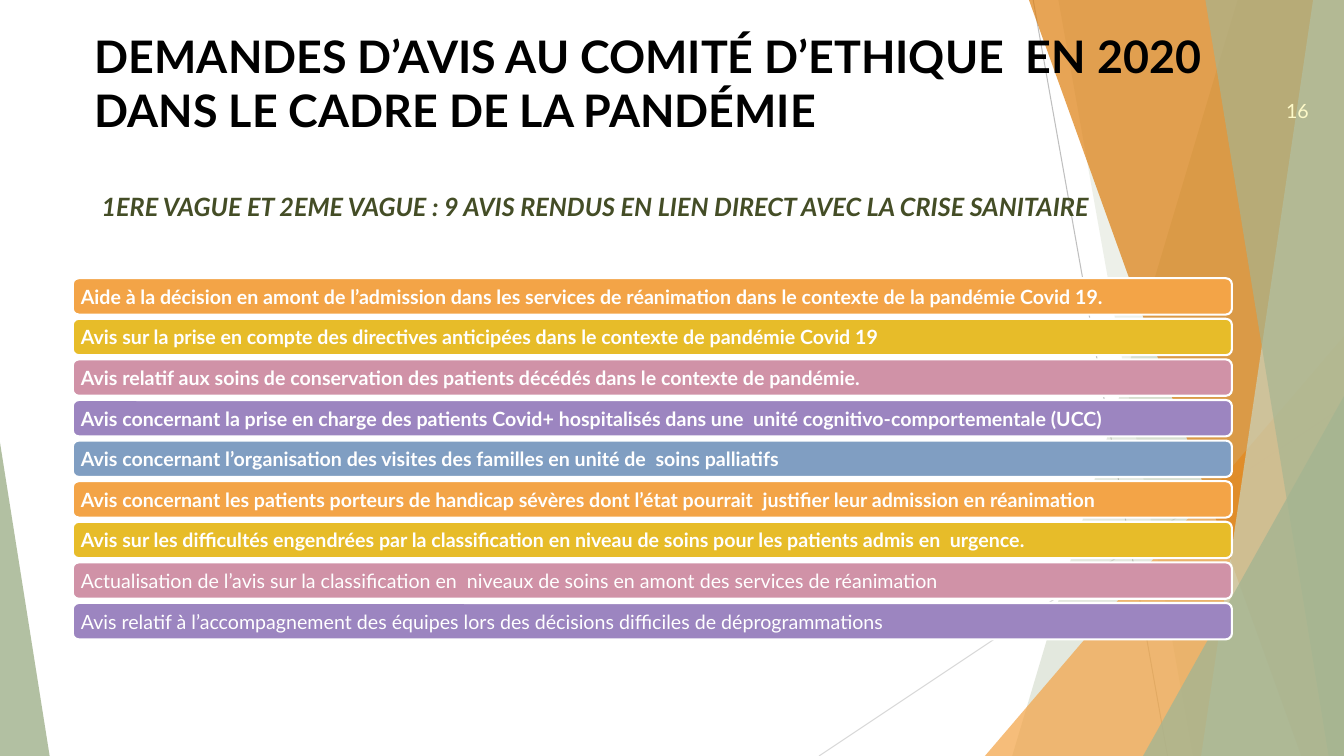
from dataclasses import dataclass
from itertools import cycle

from lxml import etree
from pptx import Presentation
from pptx.dml.color import RGBColor
from pptx.enum import shapes, text
from pptx.oxml.ns import qn
from pptx.util import Pt


@dataclass(frozen=True)
class Theme:
    font: str = "Lato"
    black: str = "000000"
    white: str = "FFFFFF"
    olive: str = "444D26"
    cream: str = "FEFAC9"
    sage: str = "A5B592"
    mist: str = "C9D3BE"
    amber: str = "F3A447"
    rust: str = "DD7E0E"
    greys: tuple = ("BFBFBF", "D9D9D9")
    bars: tuple = ("F3A447", "E7BC29", "D092A7", "9C85C0", "809EC2")
    title: int = 32
    lead: int = 18
    body: int = 14


THEME = Theme()
WIDE, HIGH = 960, 540

TITLE = "DEMANDES D’AVIS AU COMITÉ D’ETHIQUE  EN 2020 DANS LE CADRE DE LA PANDÉMIE"
LEAD = "1ERE VAGUE ET 2EME VAGUE : 9 AVIS RENDUS EN LIEN DIRECT AVEC LA CRISE SANITAIRE"
# Each notice, and whether it is bold
NOTES = [
    ("Aide à la décision en amont de l’admission dans les services de réanimation dans le contexte de la pandémie Covid 19.", True),
    ("Avis sur la prise en compte des directives anticipées dans le contexte de pandémie Covid 19", True),
    ("Avis relatif aux soins de conservation des patients décédés dans le contexte de pandémie.", True),
    ("Avis concernant la prise en charge des patients Covid+ hospitalisés dans une  unité cognitivo-comportementale (UCC)", True),
    ("Avis concernant l’organisation des visites des familles en unité de  soins palliatifs", True),
    ("Avis concernant les patients porteurs de handicap sévères dont l’état pourrait  justifier leur admission en réanimation", True),
    ("Avis sur les difficultés engendrées par la classification en niveau de soins pour les patients admis en  urgence.", True),
    ("Actualisation de l’avis sur la classification en  niveaux de soins en amont des services de réanimation", False),
    ("Avis relatif à l’accompagnement des équipes lors des décisions difficiles de déprogrammations", False),
]


def place(shape, left, top, width, height):
    shape.left, shape.top = Pt(left), Pt(top)
    shape.width, shape.height = Pt(width), Pt(height)


def write(shape, words, size, color, bold=False, italic=False,
          anchor=text.MSO_ANCHOR.MIDDLE):
    frame = shape.text_frame
    frame.word_wrap = True
    frame.auto_size = text.MSO_AUTO_SIZE.NONE
    frame.vertical_anchor = anchor
    para = frame.paragraphs[0]
    para.text = words
    para.alignment = text.PP_ALIGN.LEFT
    font = para.font
    font.name, font.size = THEME.font, Pt(size)
    font.bold, font.italic = bold, italic
    font.color.rgb = RGBColor.from_string(color)


def paint(shape, color, alpha=100):
    shape.shadow.inherit = False
    shape.fill.solid()
    shape.fill.fore_color.rgb = RGBColor.from_string(color)
    shape.line.fill.background()
    if alpha < 100:
        tint = shape.element.spPr.find(qn("a:solidFill")).find(qn("a:srgbClr"))
        etree.SubElement(tint, qn("a:alpha"), val=str(alpha * 1000))


def add_line(slide, start, end, color):
    line = slide.shapes.add_connector(
        shapes.MSO_CONNECTOR.STRAIGHT, *map(Pt, start + end))
    line.line.color.rgb = RGBColor.from_string(color)
    line.line.width = Pt(0.75)
    etree.SubElement(line.element.spPr, qn("a:effectLst"))


def add_band(slide, top, foot, color, alpha):
    """Fill from a slanted edge to the right side of the slide."""
    form = slide.shapes.build_freeform(Pt(top), 0)
    form.add_line_segments(
        [(Pt(x), Pt(y)) for x, y in ((WIDE, 0), (WIDE, HIGH), (foot, HIGH))])
    paint(form.convert_to_shape(), color, alpha)


def add_wedge(slide, left, top, width, peak, color, alpha):
    """Stand a triangle on the foot of the slide."""
    wedge = slide.shapes.add_shape(
        shapes.MSO_SHAPE.ISOSCELES_TRIANGLE,
        Pt(left), Pt(top), Pt(width), Pt(HIGH - top))
    wedge.adjustments[0] = peak
    paint(wedge, color, alpha)


def add_label(slide, box, words, size, color, **style):
    label = slide.shapes.add_textbox(*map(Pt, box))
    write(label, words, size, color, **style)


def add_bar(slide, top, words, bold, color):
    bar = slide.shapes.add_shape(
        shapes.MSO_SHAPE.ROUNDED_RECTANGLE, Pt(52), Pt(top), Pt(828), Pt(26))
    paint(bar, color)
    bar.line.color.rgb = RGBColor.from_string(THEME.white)
    bar.line.width = Pt(1.5)
    frame = bar.text_frame
    frame.margin_left = frame.margin_right = Pt(4.5)
    frame.margin_top = frame.margin_bottom = 0
    write(bar, words, THEME.body, THEME.white, bold)


def add_decor(slide):
    add_line(slide, (738, 0), (834, HIGH), THEME.greys[0])
    add_line(slide, (WIDE, 290), (585, HIGH), THEME.greys[1])
    add_band(slide, 884, 723, THEME.sage, 30)
    add_band(slide, 756, 852, THEME.sage, 20)
    add_wedge(slide, 703.5, 240, 256.5, 1, THEME.amber, 72)
    add_band(slide, 735, 929.5, THEME.rust, 70)
    add_band(slide, 938, 858, THEME.mist, 70)
    add_band(slide, 861, 949, THEME.sage, 65)
    add_wedge(slide, 816.5, 283, 143.5, 1, THEME.sage, 80)
    add_wedge(slide, 0, 316, 35.5, 0, THEME.sage, 85)


def main():
    deck = Presentation()
    deck.slide_width, deck.slide_height = Pt(WIDE), Pt(HIGH)
    slide = deck.slides.add_slide(deck.slide_layouts[5])

    # Backdrop
    add_decor(slide)

    # Title, raised above the backdrop
    title = slide.shapes.title
    place(title, 60.5, 22.3, 870.5, 78.5)
    write(title, TITLE, THEME.title, THEME.black, bold=True,
          anchor=text.MSO_ANCHOR.BOTTOM)
    slide.shapes.element.append(title.element)

    # Lead line and page number
    add_label(slide, (65.5, 133, 802, 30), LEAD, THEME.lead, THEME.olive,
              bold=True, italic=True, anchor=text.MSO_ANCHOR.TOP)
    add_label(slide, (911.5, 55, 48, 48), "16", THEME.body, THEME.cream)

    # Stack of notices
    for row, ((words, bold), color) in enumerate(zip(NOTES, cycle(THEME.bars))):
        add_bar(slide, 198.7 + 29 * row, words, bold, color)

    deck.save("out.pptx")


if __name__ == "__main__":
    main()
